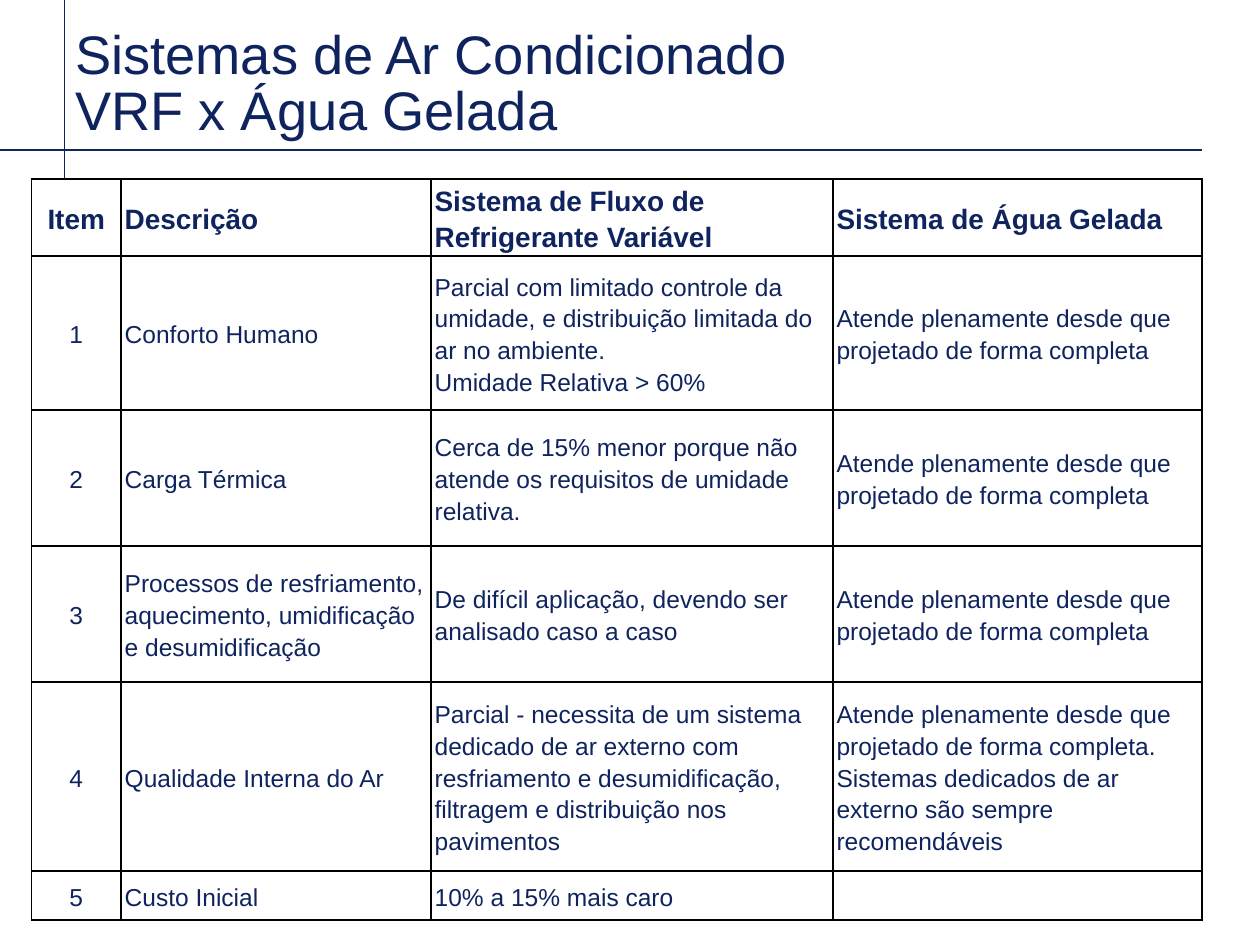
from lxml import etree
from pptx import Presentation
from pptx.dml.color import RGBColor
from pptx.enum import shapes, text
from pptx.oxml.ns import qn
from pptx.util import Inches, Pt

NAVY = RGBColor(0x0F, 0x24, 0x5F)
WHITE = RGBColor(0xFF, 0xFF, 0xFF)
BLACK = RGBColor(0x00, 0x00, 0x00)

TITLE = ["Sistemas de Ar Condicionado", "VRF x Água Gelada"]
COLS = [0.71, 2.46, 3.19, 2.93]
ROWS = [0.59, 1.22, 1.08, 1.08, 1.5, 0.39]
FULL = "Atende plenamente desde que projetado de forma completa"
# Each cell is a list of paragraphs
CELLS = [
    [["Item"], ["Descrição"], ["Sistema de Fluxo de Refrigerante Variável"],
     ["Sistema de Água Gelada"]],
    [["1"], ["Conforto Humano"],
     ["Parcial com limitado controle da umidade, e distribuição limitada do ar no ambiente.",
      "Umidade Relativa > 60%"], [FULL]],
    [["2"], ["Carga Térmica"],
     ["Cerca de 15% menor porque não atende os requisitos de umidade relativa."], [FULL]],
    [["3"], ["Processos de resfriamento, aquecimento, umidificação e desumidificação"],
     ["De difícil aplicação, devendo ser analisado caso a caso"], [FULL]],
    [["4"], ["Qualidade Interna do Ar"],
     ["Parcial - necessita de um sistema dedicado de ar externo com resfriamento e "
      "desumidificação, filtragem e distribuição nos pavimentos"],
     [FULL + ".", "Sistemas dedicados de ar externo são sempre recomendáveis"]],
    [["5"], ["Custo Inicial"], ["10% a 15% mais caro"], []],
]


def set_font(font, size, bold=False):
    for name, value in {"name": "Arial", "size": Pt(size), "bold": bold}.items():
        setattr(font, name, value)
    font.color.rgb = NAVY


def add_borders(cell):
    """Draw a 1 pt black line on all four sides of a cell."""
    tcPr = cell._tc.get_or_add_tcPr()
    for i, side in enumerate(["lnL", "lnR", "lnT", "lnB"]):
        ln = etree.Element(qn(f"a:{side}"), w=str(Pt(1)))
        fill = etree.SubElement(ln, qn("a:solidFill"))
        etree.SubElement(fill, qn("a:srgbClr"), val=str(BLACK))
        tcPr.insert(i, ln)  # borders come before the fill


prs = Presentation()
prs.slide_width, prs.slide_height = Inches(10), Inches(7.5)
s = prs.slides.add_slide(prs.slide_layouts[6])

# Crossing rules behind the title and table
for x1, y1, x2, y2 in [(0.51, 6.62, 0.51, 0), (0, 1.19, 9.54, 1.19)]:
    line = s.shapes.add_connector(shapes.MSO_CONNECTOR.STRAIGHT, Inches(x1), Inches(y1),
                                  Inches(x2), Inches(y2))
    line.line.color.rgb = NAVY
    line.line.width = Pt(0.75)
    etree.SubElement(line._element.spPr, qn("a:effectLst"))

# Title
sp = s.shapes.add_textbox(Inches(0.5), Inches(0.25), Inches(7.56), Inches(0.92))
tf = sp.text_frame
tf.word_wrap = True
tf.vertical_anchor = text.MSO_ANCHOR.BOTTOM
p = tf.paragraphs[0]
p.line_spacing = 0.85
for i, words in enumerate(TITLE):
    if i:
        p.add_line_break()
    r = p.add_run()
    r.text = words
    set_font(r.font, 31)
set_font(p.font, 31)

# Comparison table
table = s.shapes.add_table(len(ROWS), len(COLS), Inches(0.25), Inches(1.42),
                           Inches(sum(COLS)), Inches(sum(ROWS))).table
table.horz_banding = False
for col, width in zip(table.columns, COLS):
    col.width = Inches(width)
for row, height in zip(table.rows, ROWS):
    row.height = Inches(height)

for i, row in enumerate(CELLS):
    for j, paragraphs in enumerate(row):
        cell = table.cell(i, j)
        cell.fill.solid()
        cell.fill.fore_color.rgb = WHITE
        cell.vertical_anchor = text.MSO_ANCHOR.MIDDLE
        cell.margin_left = cell.margin_right = Inches(0.03)
        cell.margin_top = cell.margin_bottom = 0
        add_borders(cell)
        tf = cell.text_frame
        for k, words in enumerate(paragraphs):
            p = tf.add_paragraph() if k else tf.paragraphs[0]
            p.alignment = text.PP_ALIGN.LEFT if j else text.PP_ALIGN.CENTER
            p.line_spacing = 1.15
            r = p.add_run()
            r.text = words
            set_font(r.font, 14 if i else 16, bold=i == 0)

prs.save("out.pptx")
